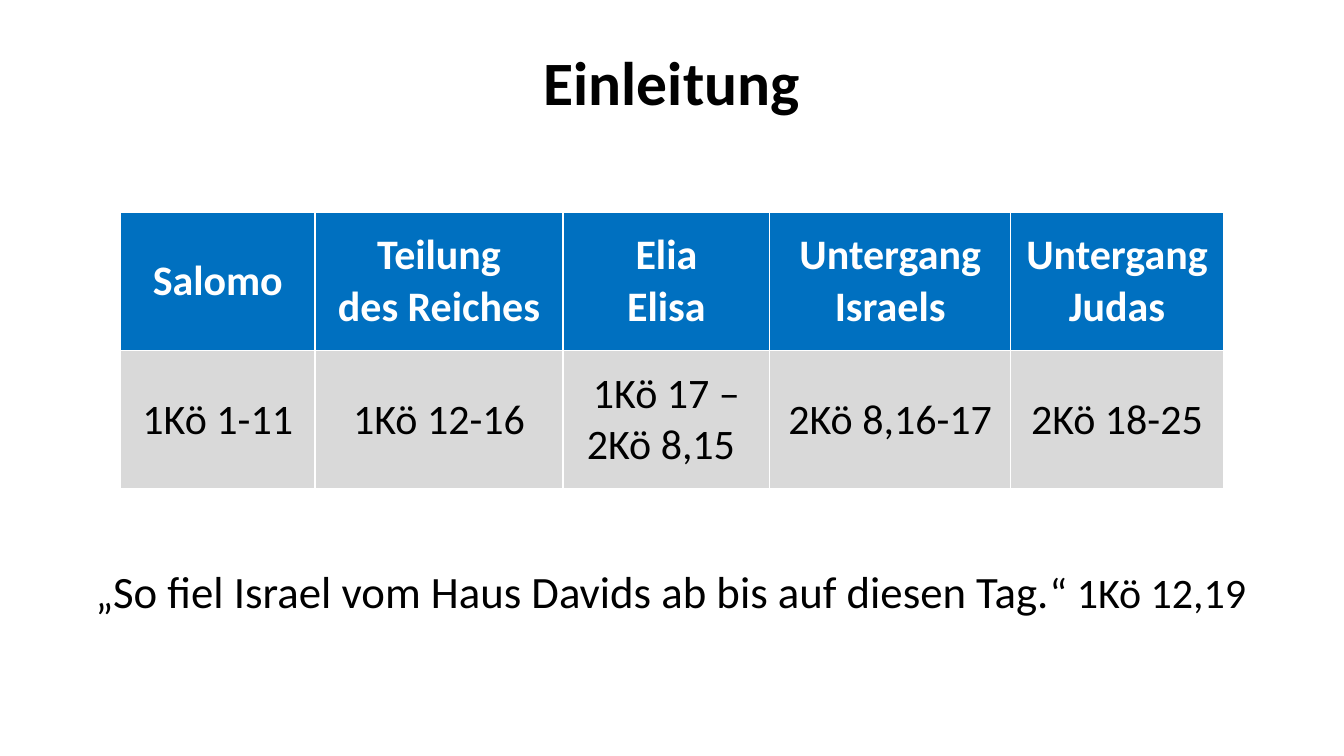
from pptx import Presentation
from pptx.dml.color import RGBColor
from pptx.enum.text import MSO_ANCHOR, MSO_AUTO_SIZE, PP_ALIGN
from pptx.util import Cm, Pt

BLACK = RGBColor(0x00, 0x00, 0x00)
WHITE = RGBColor(0xFF, 0xFF, 0xFF)
BLUE = RGBColor(0x00, 0x70, 0xC0)
GREY = RGBColor(0xD9, 0xD9, 0xD9)


def add_span(para, text, size=30, color=BLACK, bold=False):
    span = para.add_run()
    span.text = text
    span.font.name = "Calibri"
    span.font.size = Pt(size)
    span.font.bold = bold
    span.font.color.rgb = color


deck = Presentation()
deck.slide_width = Cm(33.87)
deck.slide_height = Cm(19.05)
page = deck.slides.add_slide(deck.slide_layouts[5])

title = page.shapes.title
title.left, title.top, title.width, title.height = Cm(2.33), Cm(1.01), Cm(29.21), Cm(2.27)
title.text_frame.vertical_anchor = MSO_ANCHOR.MIDDLE
title_para = title.text_frame.paragraphs[0]
title_para.alignment = PP_ALIGN.CENTER
title_para.line_spacing = 0.9
add_span(title_para, "Einleitung", size=44, bold=True)

periods = [
    (4.9, ["Salomo"], ["1Kö 1-11"]),
    (6.25, ["Teilung", "des Reiches"], ["1Kö 12-16"]),
    (5.21, ["Elia", "Elisa"], ["1Kö 17 –", " 2Kö 8,15"]),
    (6.07, ["Untergang", "Israels"], ["2Kö 8,16-17"]),
    (5.36, ["Untergang", "Judas"], ["2Kö 18-25"]),
]
row_styles = [(BLUE, WHITE, True), (GREY, BLACK, False)]
table_width = sum(width for width, *_ in periods)
table = page.shapes.add_table(
    len(row_styles), len(periods), Cm(3.04), Cm(5.34), Cm(table_width), Cm(6.98)
).table

for column, (width, *texts) in enumerate(periods):
    table.columns[column].width = Cm(width)
    for row, (lines, (fill, color, bold)) in enumerate(zip(texts, row_styles)):
        cell = table.cell(row, column)
        cell.fill.solid()
        cell.fill.fore_color.rgb = fill
        cell.vertical_anchor = MSO_ANCHOR.MIDDLE
        cell.margin_left = cell.margin_right = Cm(0.36)
        cell.margin_top = cell.margin_bottom = Cm(0)
        for number, line in enumerate(lines):
            frame = cell.text_frame
            para = frame.add_paragraph() if number else frame.paragraphs[0]
            para.alignment = PP_ALIGN.CENTER
            add_span(para, line, color=color, bold=bold)

table.cell(1, 2).text_frame.paragraphs[1].alignment = PP_ALIGN.LEFT

verse = page.shapes.add_textbox(Cm(2.16), Cm(14.07), Cm(29.54), Cm(1.63)).text_frame
verse.word_wrap = True
verse.auto_size = MSO_AUTO_SIZE.SHAPE_TO_FIT_TEXT
verse_para = verse.paragraphs[0]
add_span(verse_para, "„")
add_span(verse_para, "So fiel Israel vom Haus Davids ab bis auf diesen Tag.", size=32)
add_span(verse_para, "“ 1Kö 12,19")

deck.save("out.pptx")
